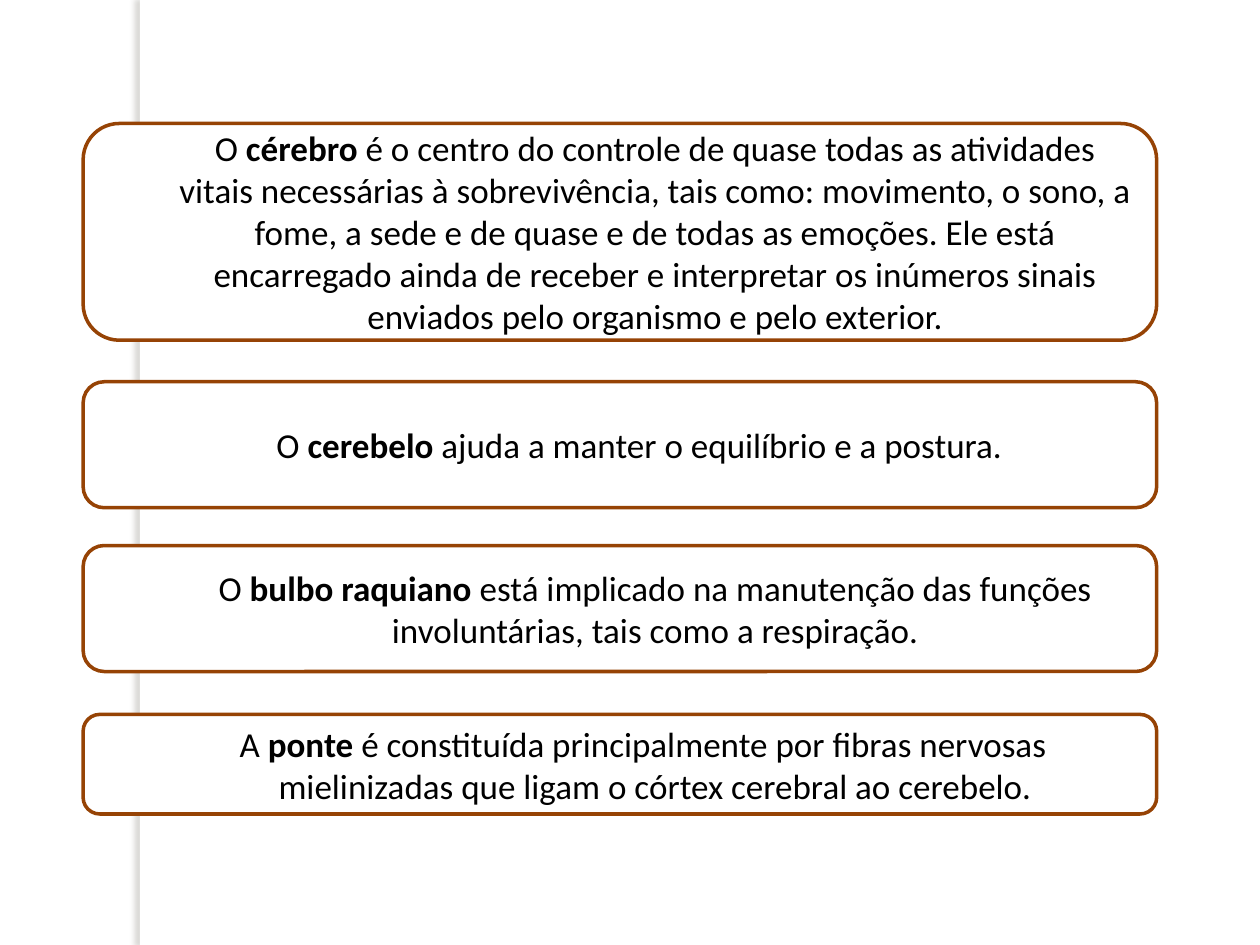
from lxml import etree
from pptx import Presentation, util as u
from pptx.dml.color import RGBColor
from pptx.enum import shapes, text
from pptx.oxml.ns import qn

Inches, Pt = u.Inches, u.Pt


def tint(code):
    return RGBColor.from_string(code)


def draw(kind, left, top, wide, high):
    item = page.shapes.add_shape(
        kind, Inches(left), Inches(top), Inches(wide), Inches(high))
    item.shadow.inherit = False
    item.fill.solid()
    item.fill.fore_color.rgb = tint("FFFFFF")
    return item


deck = Presentation()
deck.slide_width, deck.slide_height = Inches(10), Inches(7.5)
page = deck.slides.add_slide(deck.slide_layouts[6])

strip = draw(shapes.MSO_SHAPE.RECTANGLE, 1.11, 0, 0.08, 7.5)
strip.line.fill.background()
glow = etree.SubElement(
    strip._element.spPr.find(qn("a:effectLst")), qn("a:outerShdw"),
    blurRad=str(Pt(3)), dist=str(Pt(3)), dir="10800000", algn="tl", rotWithShape="0")
shade = etree.SubElement(glow, qn("a:srgbClr"), val="736F63")
etree.SubElement(shade, qn("a:alpha"), val="25000")

parts = [
    (0.98, 1.72, 0, 0, "O ", "cérebro",
     " é o centro do controle de quase todas as atividades vitais necessárias à "
     "sobrevivência, tais como: movimento, o sono, a fome, a sede e de quase e de "
     "todas as emoções. Ele está encarregado ainda de receber e interpretar os "
     "inúmeros sinais enviados pelo organismo e pelo exterior."),
    (3.03, 1, 0, 0.25, "O ", "cerebelo", " ajuda a manter o equilíbrio e a postura."),
    (4.33, 1, 0, 0, "O ", "bulbo raquiano ",
     "está implicado na manutenção das funções involuntárias, tais como a respiração."),
    (5.67, 0.79, -0.19, 0, "A ", "ponte",
     " é constituída principalmente por fibras nervosas\n"
     "mielinizadas que ligam o córtex cerebral ao cerebelo."),
]

for top, high, first, right, lead, term, rest in parts:
    box = draw(shapes.MSO_SHAPE.ROUNDED_RECTANGLE, 0.66, top, 8.52, high)
    box.line.color.rgb = tint("964305")
    box.line.width = Pt(2)
    frame = box.text_frame
    frame.word_wrap = True
    frame.vertical_anchor = text.MSO_ANCHOR.MIDDLE
    para = frame.paragraphs[0]
    para.alignment = text.PP_ALIGN.CENTER
    props = para._p.get_or_add_pPr()
    props.set("marL", str(Inches(0.56)))
    props.set("marR", str(Inches(right)))
    props.set("indent", str(Inches(first)))
    head, *tail = rest.split("\n")
    for words, bold in [(lead, False), (term, True), (head, False)] + [(t, False) for t in tail]:
        if words in tail:
            para.add_line_break()
        run = para.add_run()
        run.text = words
        run.font.name = "Calibri"
        run.font.size = Pt(20)
        run.font.bold = bold
        run.font.color.rgb = tint("000000")

deck.save("out.pptx")
